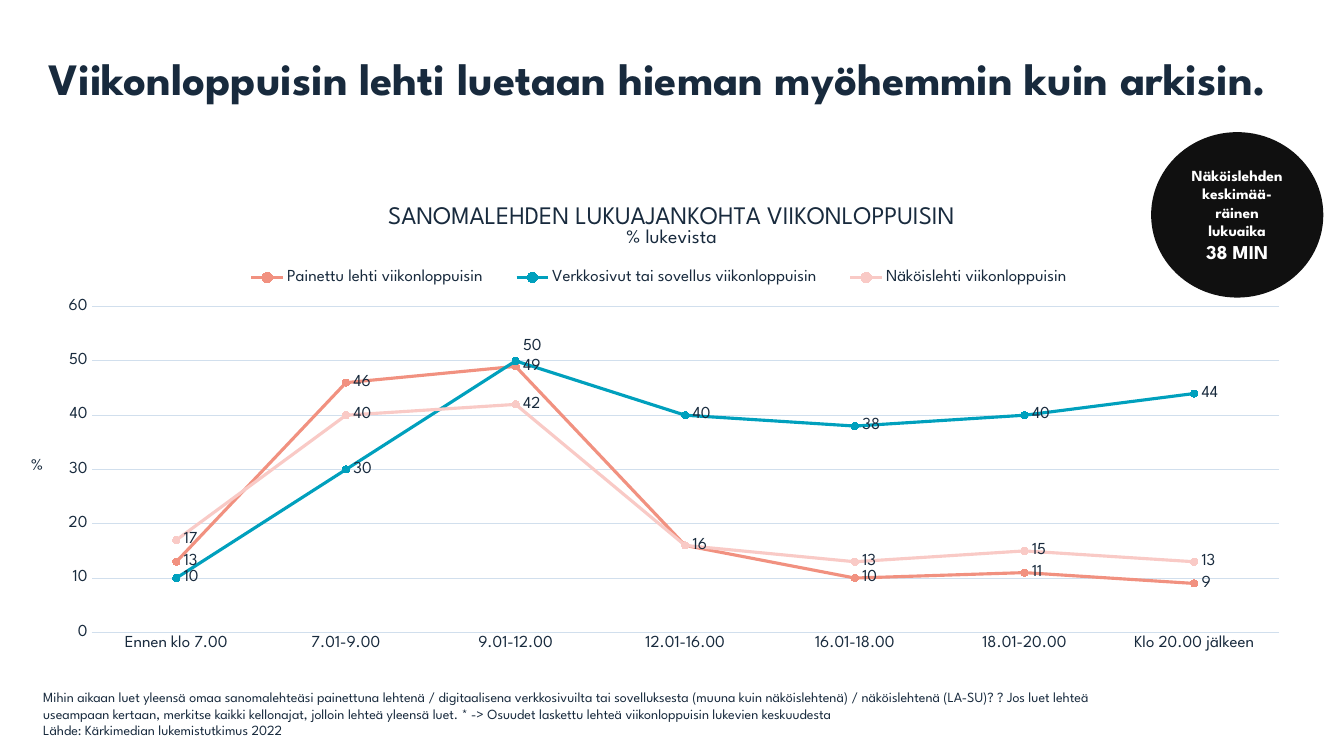
from lxml import etree
from pptx import Presentation
from pptx.chart.data import CategoryChartData
from pptx.dml.color import RGBColor
from pptx.enum.chart import XL_CHART_TYPE, XL_LABEL_POSITION, XL_LEGEND_POSITION, XL_MARKER_STYLE, XL_TICK_MARK
from pptx.enum.shapes import MSO_SHAPE
from pptx.enum.text import MSO_ANCHOR, PP_ALIGN
from pptx.oxml import parse_xml
from pptx.oxml.ns import nsdecls, qn
from pptx.util import Cm, Pt

LINE_MARKERS = XL_CHART_TYPE.LINE_MARKERS
RIGHT = XL_LABEL_POSITION.RIGHT
TOP = XL_LEGEND_POSITION.TOP
CIRCLE = XL_MARKER_STYLE.CIRCLE
NO_TICK = XL_TICK_MARK.NONE
OVAL = MSO_SHAPE.OVAL
MIDDLE, ANCHOR_TOP = MSO_ANCHOR.MIDDLE, MSO_ANCHOR.TOP
CENTER, LEFT = PP_ALIGN.CENTER, PP_ALIGN.LEFT

FONT = "League Spartan"
COLORS = {"ink": "182A3D", "grid": "D1DFED", "white": "FFFFFF", "badge": "101010",
          "print": "F19180", "web": "00A0BD", "replica": "F9CAC6"}
TIMES = ["Ennen klo 7.00", "7.01-9.00", "9.01-12.00", "12.01-16.00",
         "16.01-18.00", "18.01-20.00", "Klo 20.00 jälkeen"]
READERS = [
    ("Painettu lehti viikonloppuisin", "print", [13, 46, 49, 16, 10, 11, 9]),
    ("Verkkosivut tai sovellus viikonloppuisin", "web", [10, 30, 50, 40, 38, 40, 44]),
    ("Näköislehti viikonloppuisin", "replica", [17, 40, 42, 16, 13, 15, 13]),
]


class SlideBuilder:
    """Holds the style and the current slide and adds its elements."""

    def __init__(self, s):
        self.s = s

    def color(self, name):
        return RGBColor.from_string(COLORS[name])

    def style(self, font, size, color="ink", bold=False):
        font.name, font.size, font.bold = FONT, Pt(size), bold
        font.color.rgb = self.color(color)

    def paragraphs(self, tf, rows, color="ink", bold=False, align=LEFT):
        for i, (text, size) in enumerate(rows):
            p = tf.add_paragraph() if i else tf.paragraphs[0]
            p.alignment = align
            r = p.add_run()
            r.text = text
            self.style(r.font, size, color, bold)

    def text(self, box, rows, bold=False, wrap=True, inset=True):
        sp = self.s.shapes.add_textbox(*map(Cm, box))
        tf = sp.text_frame
        tf.word_wrap, tf.vertical_anchor = wrap, ANCHOR_TOP
        if not inset:
            tf.margin_left = tf.margin_right = tf.margin_top = tf.margin_bottom = 0
        self.paragraphs(tf, rows, bold=bold)

    def badge(self, box, rows):
        sp = self.s.shapes.add_shape(OVAL, *map(Cm, box))
        sp.shadow.inherit = False
        sp.fill.solid()
        sp.fill.fore_color.rgb = self.color("badge")
        sp.line.fill.background()
        sp.text_frame.word_wrap = True
        sp.text_frame.vertical_anchor = MIDDLE
        self.paragraphs(sp.text_frame, rows, "white", True, CENTER)

    def layout(self, before, inner=False, **place):
        modes = {"xMode": "edge", "yMode": "edge"} if inner or "w" in place else {}
        items = ({"layoutTarget": "inner"} if inner else {}) | modes | place
        body = "".join(f'<c:{tag} val="{val}"/>' for tag, val in items.items())
        for old in before.getparent().findall(qn("c:layout")):
            before.getparent().remove(old)
        before.addnext(parse_xml(
            f'<c:layout {nsdecls("c")}><c:manualLayout>{body}</c:manualLayout></c:layout>'))

    def point_label(self, ser, index):
        label = ser.points[index].data_label
        label.position = RIGHT
        self.style(label.font, 12)
        return ser.data_labels._element.find(qn("c:dLbl"))

    def axis(self, axis):
        axis.major_tick_mark = axis.minor_tick_mark = NO_TICK
        self.style(axis.tick_labels.font, 12)

    def chart(self, box, title):
        data = CategoryChartData(number_format="0")
        data.categories = TIMES
        for name, _, values in READERS:
            data.add_series(name, values)
        chart = self.s.shapes.add_chart(LINE_MARKERS, *map(Cm, box), data).chart
        self.style(chart.font, 10)

        chart.has_title = True
        self.paragraphs(chart.chart_title.text_frame, title, align=CENTER)
        chart.chart_title.include_in_layout = False

        chart.has_legend = True
        chart.legend.position, chart.legend.include_in_layout = TOP, False
        self.style(chart.legend.font, 12)
        legend_pos = chart.legend._element.find(qn("c:legendPos"))
        self.layout(legend_pos, x=0.14, y=0.16, w=0.7, h=0.06)

        self.axis(chart.category_axis)
        chart.category_axis.format.line.color.rgb = self.color("grid")
        chart.category_axis.format.line.width = Pt(0.75)
        values = chart.value_axis
        self.axis(values)
        values.minimum_scale, values.maximum_scale, values.major_unit = 0, 60, 10
        values.format.line.fill.background()
        values.major_gridlines.format.line.color.rgb = self.color("grid")
        values.major_gridlines.format.line.width = Pt(0.75)

        plot = chart.plots[0]
        plot.vary_by_categories = False
        area = plot._element.getparent()
        anchor = area.find(qn("c:layout"))
        if anchor is None:
            anchor = etree.Element(qn("c:layout"))
            area.insert(0, anchor)
        self.layout(plot._element, True, x=0.034, y=0.251, w=0.954, h=0.68)
        area.insert(0, area.find(qn("c:layout")))

        for ser, (_, color, _) in zip(plot.series, READERS):
            self.line(ser, color)
        web, replica = plot.series[1], plot.series[2]
        raised = self.point_label(web, 2)
        self.layout(raised.find(qn("c:idx")), x=0, y=-0.03)
        removed = self.point_label(replica, 3)
        for child in list(removed)[1:]:
            removed.remove(child)
        etree.SubElement(removed, qn("c:delete")).set("val", "1")

    def line(self, ser, color):
        ser.smooth = False
        ser.format.line.color.rgb = self.color(color)
        ser.format.line.width = Pt(2.25)
        ser.marker.style, ser.marker.size = CIRCLE, 5
        ser.marker.format.fill.solid()
        ser.marker.format.fill.fore_color.rgb = self.color(color)
        ser.marker.format.line.color.rgb = self.color(color)
        labels = ser.data_labels
        labels.show_value, labels.position = True, RIGHT
        labels.number_format, labels.number_format_is_linked = "0", False
        self.style(labels.font, 12)


def main():
    prs = Presentation()
    prs.slide_width, prs.slide_height = Cm(33.87), Cm(19.05)
    b = SlideBuilder(prs.slides.add_slide(prs.slide_layouts[6]))
    b.text((1.22, 1.27, 31.4, 2.06),
           [("Viikonloppuisin lehti luetaan hieman myöhemmin kuin arkisin.", 32)],
           bold=True, inset=False)
    b.chart((1.24, 4.7, 31.37, 12.07),
            [("SANOMALEHDEN LUKUAJANKOHTA VIIKONLOPPUISIN", 18), ("% lukevista", 14)])
    b.text((0.84, 17.22, 27.38, 1.55), [
        ("Mihin aikaan luet yleensä omaa sanomalehteäsi painettuna lehtenä / digitaalisena "
         "verkkosivuilta tai sovelluksesta (muuna kuin näköislehtenä) / näköislehtenä (LA-SU)? "
         "? Jos luet lehteä useampaan kertaan, merkitse kaikki kellonajat, jolloin lehteä "
         "yleensä luet. * -> Osuudet laskettu lehteä viikonloppuisin lukevien keskuudesta", 10),
        ("Lähde: Kärkimedian lukemistutkimus 2022", 10)])
    b.text((0.53, 11.3, 0.89, 0.76), [("%", 12)], wrap=False)
    b.badge((29.01, 3.33, 4.34, 4.17),
            [("Näköislehden keskimää-räinen lukuaika", 11), ("38 MIN", 14)])
    prs.save("out.pptx")


if __name__ == "__main__":
    main()
